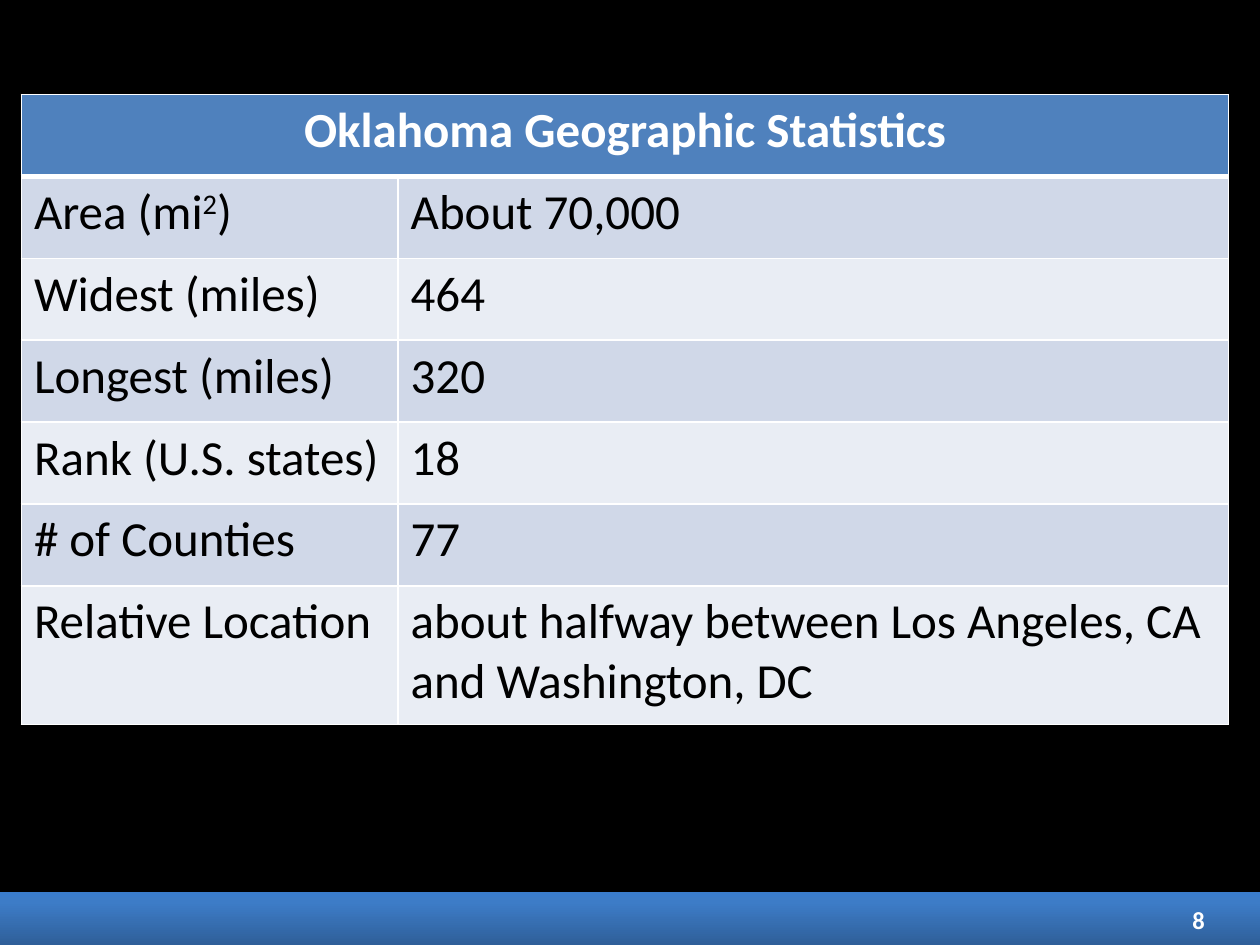
from copy import deepcopy

from lxml import etree
from pptx import Presentation
from pptx.dml.color import RGBColor
from pptx.enum.shapes import MSO_SHAPE
from pptx.enum.text import MSO_ANCHOR, PP_ALIGN
from pptx.oxml import parse_xml
from pptx.oxml.ns import nsdecls, qn
from pptx.util import Inches, Pt

RECTANGLE = MSO_SHAPE.RECTANGLE
MIDDLE = MSO_ANCHOR.MIDDLE
CENTER, LEFT, RIGHT = PP_ALIGN.CENTER, PP_ALIGN.LEFT, PP_ALIGN.RIGHT

FONT = "Calibri"
BLANK_LAYOUT = 6
COLORS = {
    "background": "000000",
    "text": "000000",
    "white": "FFFFFF",
    "header": "4F81BD",
    "band_dark": "D0D8E8",
    "band_light": "E9EDF4",
}
FOOTER_STOPS = [(0, "2F5F99"), (0.8, "3D7CC7"), (1, "3A7CCB")]

TITLE = "Oklahoma Geographic Statistics"
# Label pieces alternate between normal and superscript text
STATISTICS = [
    (["Area (mi", "2", ")"], "About 70,000"),
    (["Widest (miles)"], "464"),
    (["Longest (miles)"], "320"),
    (["Rank (U.S. states)"], "18"),
    (["# of Counties"], "77"),
    (["Relative Location"],
     "about halfway between Los Angeles, CA and Washington, DC"),
]


def color(name):
    return RGBColor.from_string(COLORS[name])


def write(paragraph, pieces, size, color_name, bold=False, align=LEFT):
    paragraph.alignment = align
    font = paragraph.font
    font.name, font.size, font.bold = FONT, Pt(size), bold
    font.color.rgb = color(color_name)
    for index, piece in enumerate(pieces):
        run = paragraph.add_run()
        run.text = piece
        if index % 2:
            run.font._element.set("baseline", "30000")


def set_borders(cell, top=1, bottom=1):
    properties = cell._tc.get_or_add_tcPr()
    widths = {"lnL": 1, "lnR": 1, "lnT": top, "lnB": bottom}
    for position, (side, width) in enumerate(widths.items()):
        properties.insert(position, parse_xml(
            f'<a:{side} {nsdecls("a")} w="{Pt(width)}"><a:solidFill>'
            f'<a:srgbClr val="{COLORS["white"]}"/></a:solidFill></a:{side}>'))


def fill_cell(cell, fill_name):
    cell.fill.solid()
    cell.fill.fore_color.rgb = color(fill_name)


def add_footer(slide, left, top, width, height):
    # Gradient bar, dark at the bottom
    bar = slide.shapes.add_shape(RECTANGLE, left, top, width, height)
    bar.line.fill.background()
    bar.fill.gradient()
    bar.fill.gradient_angle = 90
    stop_list = bar._element.spPr.find(".//" + qn("a:gsLst"))
    stop_list.append(deepcopy(stop_list[-1]))
    for stop, (position, hex_color) in zip(bar.fill.gradient_stops, FOOTER_STOPS):
        stop.position = position
        stop.color.rgb = RGBColor.from_string(hex_color)

    # Soft shadow under the bar
    bar.shadow.inherit = False
    effects = bar._element.spPr.find(qn("a:effectLst"))
    shadow = etree.SubElement(
        effects, qn("a:outerShdw"), blurRad=str(Pt(3.1)), dist=str(Pt(1.8)),
        dir="5400000", rotWithShape="0")
    shade = etree.SubElement(shadow, qn("a:srgbClr"), val=COLORS["background"])
    etree.SubElement(shade, qn("a:alpha"), val="35000")

    # Slide number
    number = slide.shapes.add_textbox(
        left + Inches(7.33), top + Inches(0.02), Inches(2.33), Inches(0.4))
    frame = number.text_frame
    frame.word_wrap = True
    frame.vertical_anchor = MIDDLE
    write(frame.paragraphs[0], ["8"], 14, "white", bold=True, align=RIGHT)


def add_statistics(slide, left, top, width, height):
    table = slide.shapes.add_table(
        len(STATISTICS) + 1, 2, left, top, width, height).table
    label_width = Inches(2.99)
    table.columns[0].width = label_width
    table.columns[1].width = width - label_width

    # Equal rows; the last one takes the remaining height
    row_height = Inches(0.65)
    for row in table.rows:
        row.height = row_height
    table.rows[len(STATISTICS)].height = height - row_height * len(STATISTICS)

    # Heading across both columns
    heading = table.cell(0, 0)
    heading.merge(table.cell(0, 1))
    for column in range(2):
        fill_cell(table.cell(0, column), "header")
        set_borders(table.cell(0, column), bottom=3)
    write(heading.text_frame.paragraphs[0], [TITLE], 28, "white",
          bold=True, align=CENTER)

    # Banded statistics
    for row, (label, value) in enumerate(STATISTICS, start=1):
        for column, pieces in enumerate((label, [value])):
            cell = table.cell(row, column)
            fill_cell(cell, "band_dark" if row % 2 else "band_light")
            set_borders(cell, top=3 if row == 1 else 1)
            write(cell.text_frame.paragraphs[0], pieces, 28, "text")


def main():
    prs = Presentation()
    prs.slide_width, prs.slide_height = Inches(10), Inches(7.5)
    slide = prs.slides.add_slide(prs.slide_layouts[BLANK_LAYOUT])
    slide.background.fill.solid()
    slide.background.fill.fore_color.rgb = color("background")
    add_footer(slide, Inches(0), Inches(7.08), Inches(10), Inches(0.42))
    add_statistics(slide, Inches(0.17), Inches(0.75), Inches(9.58), Inches(5))
    prs.save("out.pptx")


if __name__ == "__main__":
    main()
